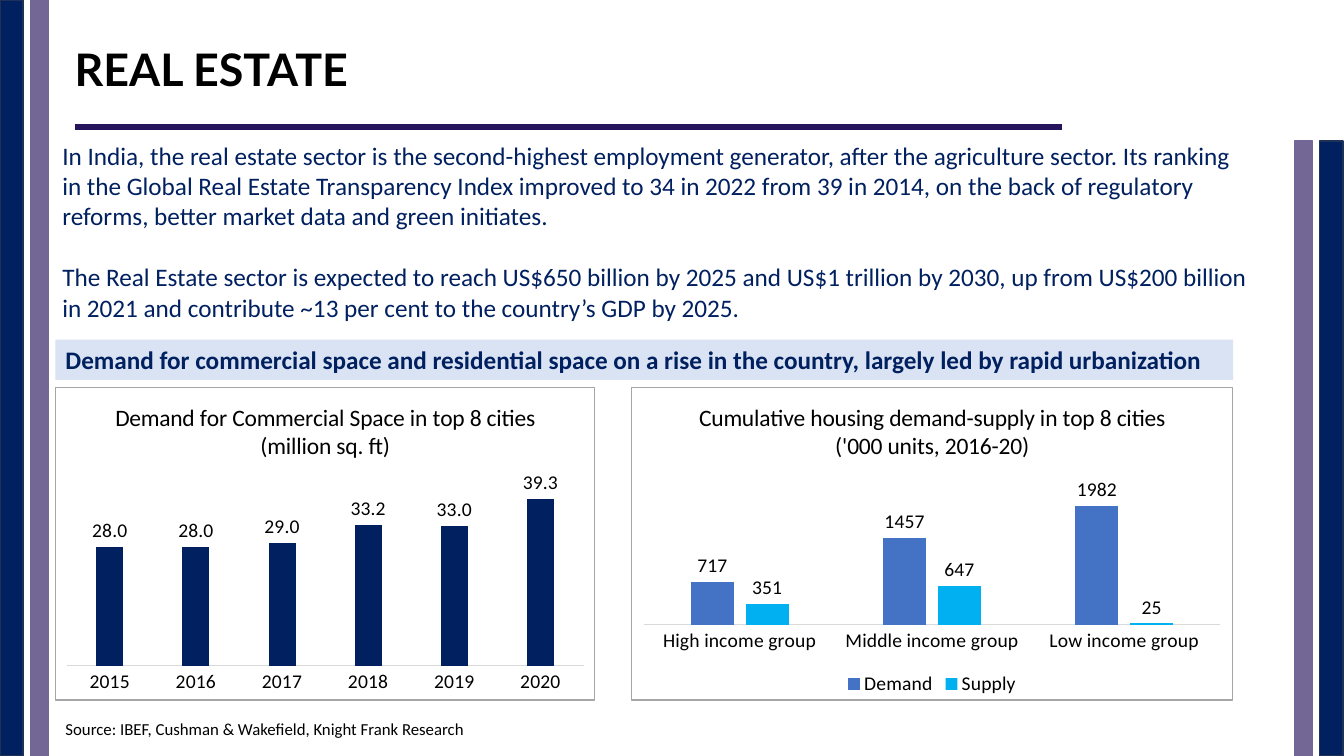
import pptx
import pptx.chart.data
import pptx.dml.color
import pptx.enum.chart
import pptx.enum.shapes
import pptx.enum.text
import pptx.oxml
import pptx.oxml.ns
import pptx.util
from lxml import etree

Inches = pptx.util.Inches
Pt = pptx.util.Pt
qn = pptx.oxml.ns.qn

COLORS = {
    "navy": "002060", "navy_edge": "1E3256", "purple": "736796",
    "rule": "26145D", "band": "DAE3F3", "black": "000000",
    "blue": "4472C4", "cyan": "00B0F0", "axis": "D9D9D9", "border": "A6A6A6",
}


def rgb(name):
    return pptx.dml.color.RGBColor.from_string(COLORS[name])


class Page:
    """Current slide together with its text and chart style."""

    def __init__(self, deck, font="Calibri"):
        self.slide = deck.slides.add_slide(deck.slide_layouts[6])
        self.font = font

    def style(self, font, size, color, bold=False, name=None):
        font.name, font.size, font.bold = name or self.font, Pt(size), bold
        font.color.rgb = rgb(color)

    def fill_text(self, box, paragraphs, size, color, bold=False, name=None, gap=0):
        frame = box.text_frame
        frame.word_wrap = True
        for index, text in enumerate(paragraphs):
            para = frame.add_paragraph() if index else frame.paragraphs[0]
            para.alignment = pptx.enum.text.PP_ALIGN.LEFT
            if index:
                para.space_before = Pt(gap)
            span = para.add_run()
            span.text = text
            self.style(span.font, size, color, bold, name)

    def text(self, left, top, width, height, paragraphs, size, color, **options):
        box = self.slide.shapes.add_textbox(
            Inches(left), Inches(top), Inches(width), Inches(height))
        self.fill_text(box, paragraphs, size, color, **options)
        return box

    def rectangle(self, left, top, width, height, fill, line=None):
        box = self.slide.shapes.add_shape(
            pptx.enum.shapes.MSO_SHAPE.RECTANGLE,
            Inches(left), Inches(top), Inches(width), Inches(height))
        box.shadow.inherit = False
        box.fill.solid()
        box.fill.fore_color.rgb = rgb(fill)
        if line:
            box.line.color.rgb = rgb(line)
            box.line.width = Pt(1)
        else:
            box.line.fill.background()
        return box

    def rule(self, left, right, y, color, width):
        line = self.slide.shapes.add_connector(
            pptx.enum.shapes.MSO_CONNECTOR.STRAIGHT,
            Inches(left), Inches(y), Inches(right), Inches(y))
        line.line.color.rgb = rgb(color)
        line.line.width = Pt(width)
        etree.SubElement(line._element.spPr, qn("a:effectLst"))

    def columns(self, left, width, title, categories, series, top_value,
                plot_height, number_format, legend=False):
        data = pptx.chart.data.CategoryChartData(number_format=number_format)
        data.categories = categories
        for name, values, _ in series:
            data.add_series(name, values)
        chart = self.slide.shapes.add_chart(
            pptx.enum.chart.XL_CHART_TYPE.COLUMN_CLUSTERED,
            Inches(left), Inches(3.84), Inches(width), Inches(3.11), data).chart
        self.style(chart.font, 14, "black")

        # Title
        chart.has_title = True
        frame = chart.chart_title.text_frame
        for index, text in enumerate(title):
            para = frame.add_paragraph() if index else frame.paragraphs[0]
            span = para.add_run()
            span.text = text
            self.style(span.font, 16.8, "black")

        # Legend and axes
        chart.has_legend = legend
        if legend:
            chart.legend.position = pptx.enum.chart.XL_LEGEND_POSITION.BOTTOM
            chart.legend.include_in_layout = False
            self.style(chart.legend.font, 14, "black")
        axis = chart.category_axis
        axis.major_tick_mark = pptx.enum.chart.XL_TICK_MARK.NONE
        axis.format.line.color.rgb = rgb("axis")
        axis.format.line.width = Pt(0.75)
        self.style(axis.tick_labels.font, 14, "black")
        scale = chart.value_axis
        scale.visible = scale.has_major_gridlines = False
        scale.minimum_scale, scale.maximum_scale = 0, top_value

        # Columns and labels
        plot = chart.plots[0]
        plot.gap_width, plot.overlap = 219, -27
        plot.vary_by_categories = False
        for column, (_, _, color) in zip(plot.series, series):
            column.format.fill.solid()
            column.format.fill.fore_color.rgb = rgb(color)
            labels = column.data_labels
            labels.show_value = True
            labels.number_format = number_format
            labels.number_format_is_linked = False
            labels.position = pptx.enum.chart.XL_LABEL_POSITION.OUTSIDE_END
            self.style(labels.font, 14, "black")
        self.frame_chart(chart, plot_height)

    def frame_chart(self, chart, plot_height):
        """Place the plot area and draw the thin outer border."""
        root = chart._chartSpace
        area = root.find(".//" + qn("c:plotArea"))
        for old in area.findall(qn("c:layout")):
            area.remove(old)
        layout = etree.Element(qn("c:layout"))
        manual = etree.SubElement(layout, qn("c:manualLayout"))
        for tag, value in (("layoutTarget", "inner"), ("xMode", "edge"),
                           ("yMode", "edge"), ("x", 0.02), ("y", 0.28),
                           ("w", 0.96), ("h", plot_height)):
            etree.SubElement(manual, qn("c:" + tag), val=str(value))
        area.insert(0, layout)
        border = pptx.oxml.parse_xml(
            '<c:spPr xmlns:c="http://schemas.openxmlformats.org/drawingml/2006/chart"'
            ' xmlns:a="http://schemas.openxmlformats.org/drawingml/2006/main">'
            '<a:noFill/><a:ln w="9525"><a:solidFill>'
            f'<a:srgbClr val="{COLORS["border"]}"/></a:solidFill></a:ln></c:spPr>')
        root.find(qn("c:chart")).addnext(border)


def main():
    deck = pptx.Presentation()
    deck.slide_width, deck.slide_height = Inches(13.33), Inches(7.5)
    page = Page(deck)

    # Side stripes
    for navy_left, purple_left, top in ((0, 0.3, 0), (13.09, 12.84, 1.4)):
        page.rectangle(navy_left, top, 0.23, 7.5 - top, "navy", "navy_edge")
        page.rectangle(purple_left, top, 0.18, 7.5 - top, "purple", "purple")

    # Heading
    heading = page.text(0.74, 0.21, 9.93, 0.95, ["REAL ESTATE"], 32, "black",
                        bold=True, name="Lato")
    frame = heading.text_frame
    frame.margin_left = frame.margin_right = frame.margin_top = frame.margin_bottom = 0
    frame.vertical_anchor = pptx.enum.text.MSO_ANCHOR.MIDDLE
    page.rule(0.74, 10.53, 1.26, "rule", 4.5)

    # Introduction
    page.text(0.52, 1.34, 11.97, 1.92, [
        "In India, the real estate sector is the second-highest employment generator, "
        "after the agriculture sector. Its ranking in the Global Real Estate "
        "Transparency Index improved to 34 in 2022 from 39 in 2014, on the back of "
        "regulatory reforms, better market data and green initiates.",
        "The Real Estate sector is expected to reach US$650 billion by 2025 and "
        "US$1 trillion by 2030, up from US$200 billion in 2021 and contribute "
        "~13 per cent to the country’s GDP by 2025.",
    ], 18, "navy", gap=22)

    # Key message
    band = page.rectangle(0.55, 3.37, 11.68, 0.4, "band")
    page.fill_text(band, ["Demand for commercial space and residential space on a rise "
                          "in the country, largely led by rapid urbanization"],
                   18, "navy", bold=True)

    # Charts
    page.columns(
        0.55, 5.35,
        ["Demand for Commercial Space in top 8 cities", "(million sq. ft)"],
        ["2015", "2016", "2017", "2018", "2019", "2020"],
        [("Demand for Commercial Space in top 8 cities (million sq. ft)",
          (28, 28, 29, 33.2, 33, 39.3), "navy")],
        45, 0.61, "0.0")
    page.columns(
        6.26, 5.97,
        ["Cumulative housing demand-supply in top 8 cities", "('000 units, 2016-20)"],
        ["High income group", "Middle income group", "Low income group"],
        [("Demand", (717, 1457, 1982), "blue"), ("Supply", (351, 647, 25), "cyan")],
        2500, 0.48, "General", legend=True)

    # Source
    page.text(0.55, 7.08, 5.18, 0.3,
              ["Source: IBEF, Cushman & Wakefield, Knight Frank Research"], 12, "black")

    deck.save("out.pptx")


if __name__ == "__main__":
    main()
